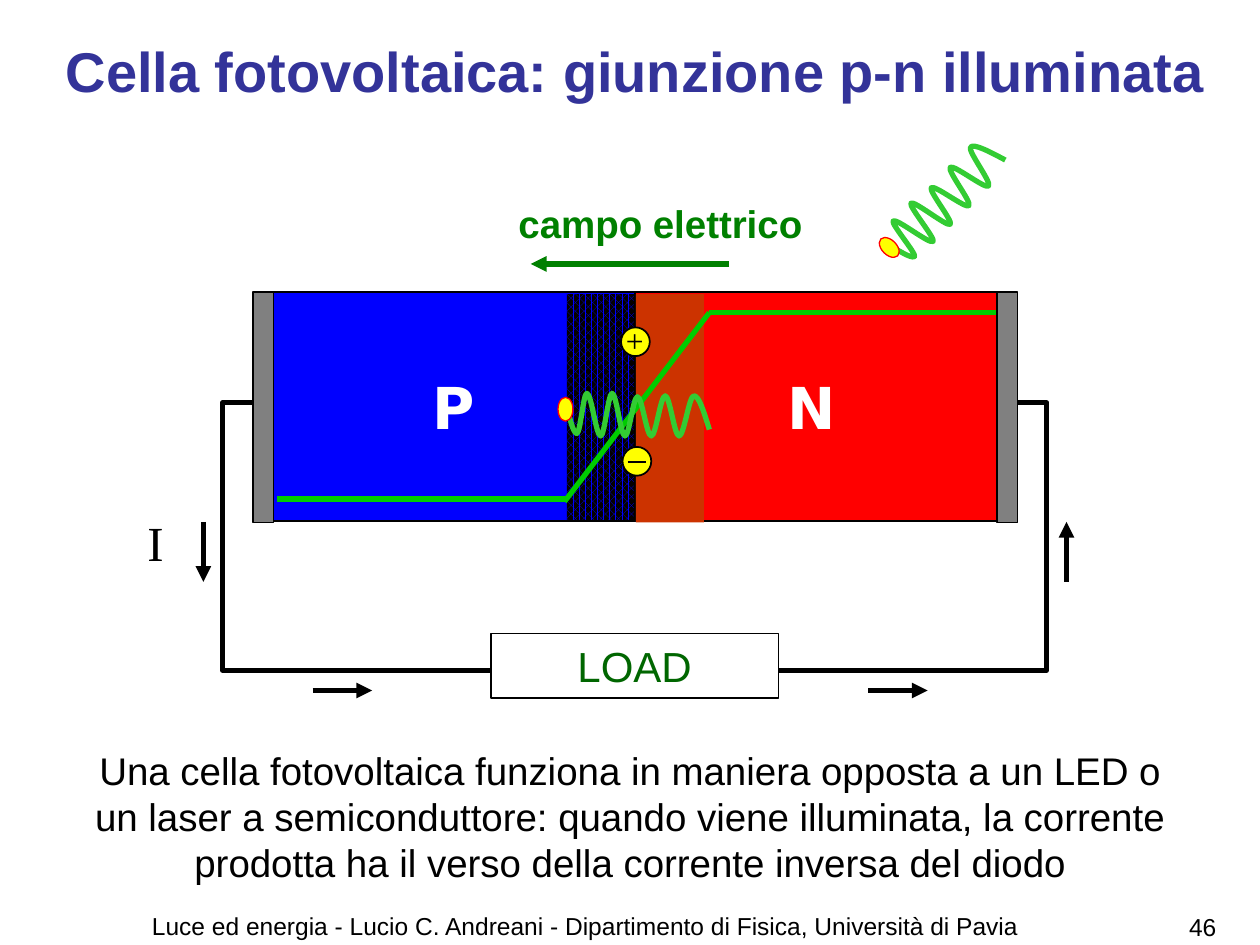
"""Build the slide on an illuminated p-n junction in a photovoltaic cell."""
import math

from lxml import etree
from pptx import Presentation
from pptx import util as u
from pptx.dml import color
from pptx.enum import dml, shapes, text
from pptx.oxml import ns

RECT, OVAL = shapes.MSO_SHAPE.RECTANGLE, shapes.MSO_SHAPE.OVAL
LEFT, CENTER, RIGHT = text.PP_ALIGN.LEFT, text.PP_ALIGN.CENTER, text.PP_ALIGN.RIGHT
TOP, MIDDLE = text.MSO_ANCHOR.TOP, text.MSO_ANCHOR.MIDDLE
BLACK, WHITE, YELLOW, RED = "000000", "FFFFFF", "FFFF00", "FF0000"
FIELD, BAND, PHOTON = "008000", "00CC00", "33CC33"

REGIONS = [
    ((12.6, 5.89, 7.52, 4.62), RED, "N"),
    ((5.49, 5.89, 7.32, 4.62), "0000FF", "P"),
]
DEPLETION_P = (11.43, 5.93, 1.35, 4.55)
DEPLETION_N = (12.82, 5.93, 1.37, 4.6)
BAND_EDGES = [
    ((5.59, 10.06), (11.38, 10.06)),
    ((14.3, 6.3), (20.09, 6.3)),
    ((11.38, 10.11), (14.3, 6.3)),
]
FIELD_ARROW = ((14.7, 5.32), (10.7, 5.32))
CURRENT_ARROWS = [
    ((4.1, 10.52), (4.1, 11.73)),
    ((21.5, 11.73), (21.5, 10.52)),
    ((6.3, 13.92), (7.5, 13.92)),
    ((17.5, 13.92), (18.7, 13.92)),
]
WIRES = [
    [(5.1, 8.12), (4.49, 8.12), (4.49, 13.51), (9.9, 13.51)],
    [(20.5, 8.12), (21.1, 8.12), (21.1, 13.51), (15.7, 13.51)],
]
CONTACT_LEFTS = [5.1, 20.1]
LOAD = (9.9, 12.77, 5.79, 1.3)
CHARGES = [(12.52, 6.6), (12.55, 9.01)]
MINUS = ((12.65, 9.32), (13.03, 9.32))
PHOTONS = [((12.85, 8.36), 0), ((19.03, 4.04), -45)]
WAVE = [
    (1.45, 0.3), (1.14, -0.38), (0.84, 0.43), (0.56, -0.38), (0.28, 0.43), (0, -0.36),
    (-0.25, 0.43), (-0.51, -0.43), (-0.74, 0.43), (-1.02, -0.43), (-1.22, 0.38), (-1.45, -0.3),
]
TEXTS = [
    ((0.9, 0.23, 23.83, 2.36), "Cella fotovoltaica: giunzione p-n illuminata",
     32, "Arial", "333399", True, CENTER, MIDDLE),
    ((8.3, 3.9, 10.03, 1.17), "campo elettrico", 22, "Arial", FIELD, True, CENTER, TOP),
    ((12.37, 6.35, 0.91, 0.99), "+", 18, "Times New Roman", BLACK, False, LEFT, TOP),
    ((2.72, 10.21, 1.8, 1.45), "I", 28, "Times New Roman", BLACK, False, LEFT, TOP),
    ((1.3, 14.93, 22.81, 3.07),
     "Una cella fotovoltaica funziona in maniera opposta a un LED o un laser a "
     "semiconduttore: quando viene illuminata, la corrente prodotta ha il verso "
     "della corrente inversa del diodo", 22, "Arial", BLACK, False, CENTER, TOP),
    ((0.5, 18.24, 22.61, 0.91),
     "Luce ed energia - Lucio C. Andreani - Dipartimento di Fisica, Università di Pavia",
     14, "Arial", BLACK, False, CENTER, TOP),
    ((23.55, 18.26, 1.22, 1.32), "46", 14, "Arial", BLACK, False, RIGHT, TOP),
]


def rgb(value):
    return color.RGBColor.from_string(value)


def set_line(item, tint, width):
    item.line.color.rgb = rgb(tint)
    item.line.width = u.Pt(width)


def write(item, words, size, face, tint, bold=False, align=CENTER, anchor=MIDDLE, wrap=True):
    frame = item.text_frame
    frame.word_wrap, frame.vertical_anchor = wrap, anchor
    para = frame.paragraphs[0]
    para.text, para.alignment = words, align
    font = para.font
    font.size, font.name, font.bold = u.Pt(size), face, bold
    font.color.rgb = rgb(tint)


def add_block(page, kind, place, fill=None, line=None, width=0.75):
    block = page.shapes.add_shape(kind, *map(u.Cm, place))
    block.shadow.inherit = False
    if fill:
        block.fill.solid()
        block.fill.fore_color.rgb = rgb(fill)
    else:
        block.fill.background()
    if line:
        set_line(block, line, width)
    else:
        block.line.fill.background()
    return block


def add_line(page, ends, tint, width=3, arrow=False):
    points = [u.Cm(value) for point in ends for value in point]
    line = page.shapes.add_connector(shapes.MSO_CONNECTOR.STRAIGHT, *points)
    set_line(line, tint, width)
    if arrow:
        etree.SubElement(line.line._get_or_add_ln(), ns.qn("a:tailEnd"), type="triangle")
    etree.SubElement(line._element.spPr, ns.qn("a:effectLst"))


def add_path(page, points, tint):
    points = [(u.Cm(x), u.Cm(y)) for x, y in points]
    builder = page.shapes.build_freeform(*points[0])
    builder.add_line_segments(points[1:], close=False)
    outline = builder.convert_to_shape()
    outline.shadow.inherit = False
    outline.fill.background()
    set_line(outline, tint, 3)
    return outline


def smooth(outline):
    """Turn the straight segments into Bezier arcs, flat at each inner crest."""
    segments = list(outline._element.iter(ns.qn("a:lnTo")))
    knots = [(int(pt.get("x")), int(pt.get("y"))) for pt in outline._element.iter(ns.qn("a:pt"))]
    for index, (segment, (x0, y0), (x1, y1)) in enumerate(zip(segments, knots, knots[1:])):
        middle = (y0 + y1) / 2
        start_y = middle if index == 0 else y0
        end_y = middle if index == len(segments) - 1 else y1
        third = (x1 - x0) / 3
        segment.clear()
        segment.tag = ns.qn("a:cubicBezTo")
        for x, y in [(x0 + third, start_y), (x1 - third, end_y), (x1, y1)]:
            etree.SubElement(segment, ns.qn("a:pt"), x=str(round(x)), y=str(round(y)))


def add_photon(page, center, angle):
    cx, cy = center
    wave = add_path(page, [(cx + x, cy + y) for x, y in WAVE], PHOTON)
    smooth(wave)
    turn, dx, dy = math.radians(angle), -1.45, -0.11
    head_x = cx + dx * math.cos(turn) - dy * math.sin(turn)
    head_y = cy + dx * math.sin(turn) + dy * math.cos(turn)
    head = add_block(page, OVAL, (head_x - 0.15, head_y - 0.24, 0.3, 0.48), YELLOW, RED)
    wave.rotation = head.rotation = angle


def main():
    deck = Presentation()
    deck.slide_width, deck.slide_height = u.Cm(25.4), u.Cm(19.05)
    page = deck.slides.add_slide(deck.slide_layouts[6])

    for place, fill, label in REGIONS:
        region = add_block(page, RECT, place, fill, BLACK, 1)
        write(region, label, 33, "DejaVu Sans", WHITE, bold=True, wrap=False)
    depletion = add_block(page, RECT, DEPLETION_P)
    depletion.fill.patterned()
    depletion.fill.pattern = dml.MSO_PATTERN.PERCENT_70
    depletion.fill.fore_color.rgb = rgb("0000FF")
    depletion.fill.back_color.rgb = rgb("050000")
    add_block(page, RECT, DEPLETION_N, "CC3300")
    for ends in BAND_EDGES:
        add_line(page, ends, BAND)

    add_line(page, FIELD_ARROW, FIELD, arrow=True)
    for wire in WIRES:
        add_path(page, wire, BLACK)
    for left in CONTACT_LEFTS:
        add_block(page, RECT, (left, 5.89, 0.41, 4.65), "808080", BLACK)
    load = add_block(page, RECT, LOAD, line=BLACK)
    write(load, "LOAD", 24, "Arial", "006600")

    for center, angle in PHOTONS:
        add_photon(page, center, angle)
    for left, top in CHARGES:
        add_block(page, OVAL, (left, top, 0.58, 0.58), YELLOW, BLACK, 1)
    add_line(page, MINUS, BLACK, 1)
    for ends in CURRENT_ARROWS:
        add_line(page, ends, BLACK, arrow=True)
    for place, *style in TEXTS:
        write(page.shapes.add_textbox(*map(u.Cm, place)), *style)

    deck.save("out.pptx")


if __name__ == "__main__":
    main()
